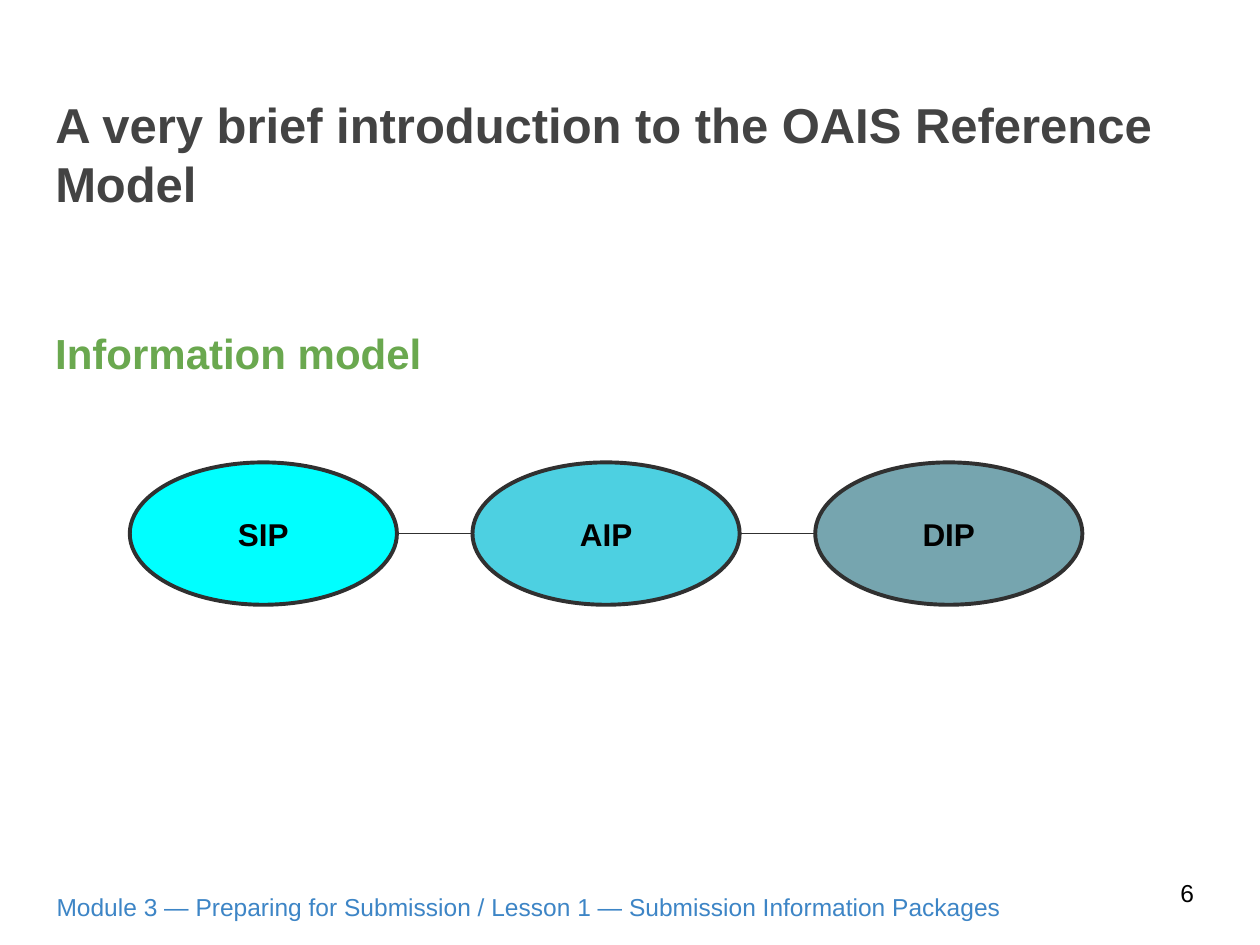
"""Build the OAIS information model slide."""
from lxml.etree import SubElement
from pptx import Presentation
from pptx.dml.color import RGBColor
from pptx.enum.shapes import MSO_CONNECTOR as Connector, MSO_SHAPE as Shape
from pptx.enum.text import MSO_ANCHOR as Anchor, PP_ALIGN as Align
from pptx.oxml.ns import qn
from pptx.util import Inches, Pt

COLORS = {
    "title": "434343", "heading": "6AA84F", "footer": "3D85C6",
    "text": "000000", "outline": "303030",
    "SIP": "00FFFF", "AIP": "4DD0E1", "DIP": "76A5AF",
}
TEXTS = [
    ("A very brief introduction to the OAIS Reference Model",
     (0.34, 0.65, 9.32, 0.83), "title", {"size": 28, "bold": True}, {}, {}),
    ("Information model",
     (0.34, 2.44, 7.13, 0.83), "heading", {"size": 24, "bold": True}, {},
     {"line_spacing": 1.15, "space_after": Pt(16)}),
    ("6", (9.27, 6.8, 0.6, 0.57), "text", {"size": 14},
     {"vertical_anchor": Anchor.MIDDLE}, {}),
    ("Module 3 — Preparing for Submission / Lesson 1 — Submission Information Packages",
     (0.35, 6.98, 9.05, 0.4), "footer", {"size": 14}, {}, {}),
]
PACKAGES = ["SIP", "AIP", "DIP"]
LEFT, TOP, WIDTH, HEIGHT, GAP = 1.03, 3.67, 2.12, 1.13, 0.6
CENTERED = {"alignment": Align.CENTER}
MIDDLE = {"vertical_anchor": Anchor.MIDDLE}
MARGINS = {f"margin_{side}": Inches(0.1) for side in ("left", "top", "right", "bottom")}


def rgb(name):
    return RGBColor.from_string(COLORS[name])


def apply(target, values):
    for name, value in values.items():
        setattr(target, name, value)


def write(holder, words, color, font, frame_format, paragraph_format):
    frame = holder.text_frame
    apply(frame, {"word_wrap": True, **MARGINS, **frame_format})
    paragraph = frame.paragraphs[0]
    apply(paragraph, paragraph_format)
    run = paragraph.add_run()
    run.text = words
    apply(run.font, {"name": "Arial", **font, "size": Pt(font["size"])})
    run.font.color.rgb = rgb(color)


def outline(item, width):
    item.line.color.rgb = rgb("outline")
    item.line.width = Pt(width)


def add_package(slide, name, left):
    package = slide.shapes.add_shape(
        Shape.OVAL, *map(Inches, (left, TOP, WIDTH, HEIGHT)))
    package.shadow.inherit = False
    package.fill.solid()
    package.fill.fore_color.rgb = rgb(name)
    outline(package, 2.25)
    write(package, name, "text", {"size": 18, "bold": True}, MIDDLE, CENTERED)
    return package


def add_link(slide, start, end):
    middle = start.top + start.height // 2
    link = slide.shapes.add_connector(
        Connector.STRAIGHT, start.left + start.width, middle, end.left, middle)
    outline(link, 0.75)
    SubElement(link._element.spPr, qn("a:effectLst"))


def main():
    deck = Presentation()
    deck.slide_width, deck.slide_height = Inches(10), Inches(7.5)
    slide = deck.slides.add_slide(deck.slide_layouts[6])
    for words, box, *style in TEXTS:
        write(slide.shapes.add_textbox(*map(Inches, box)), words, *style)
    packages = [add_package(slide, name, LEFT + i * (WIDTH + GAP))
                for i, name in enumerate(PACKAGES)]
    for start, end in zip(packages, packages[1:]):
        add_link(slide, start, end)
    deck.save("out.pptx")


if __name__ == "__main__":
    main()
